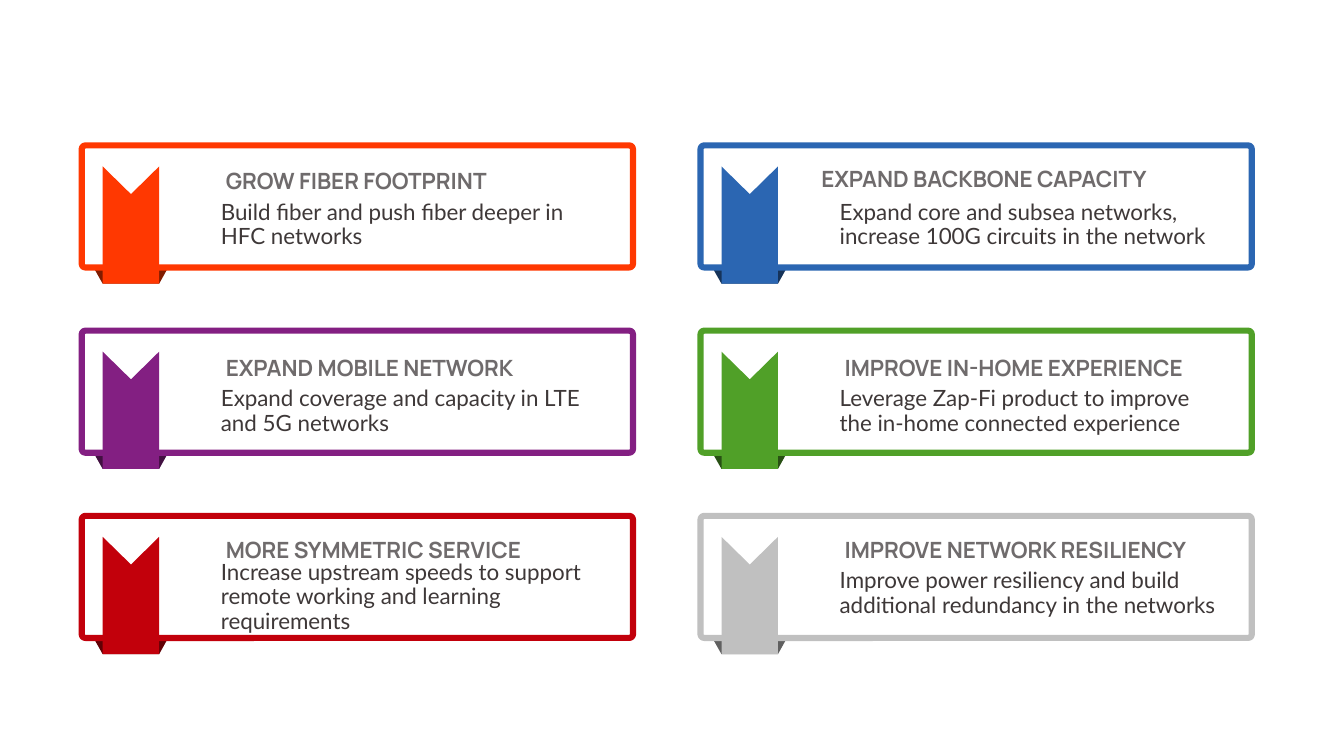
"""Build a slide of six ribbon cards describing network priorities."""
from dataclasses import dataclass

from pptx import Presentation
from pptx.dml.color import RGBColor
from pptx.enum.shapes import MSO_SHAPE
from pptx.enum.text import MSO_ANCHOR, MSO_AUTO_SIZE
from pptx.util import Pt


@dataclass(frozen=True)
class Theme:
    """Colours, fonts and type size of the slide."""
    white: str = "FFFFFF"
    heading_color: str = "6F6B6C"
    body_color: str = "3E3838"
    heading_font: str = "Manrope"
    body_font: str = "Lato"
    text_size: int = 16
    orange: tuple = ("FF3801", "801C00")
    blue: tuple = ("2B66B2", "163359")
    purple: tuple = ("831F82", "421041")
    green: tuple = ("50A028", "285014")
    red: tuple = ("C2000B", "610005")
    gray: tuple = ("C0C0C0", "606060")


def add_polygon(shapes, left, top, points, color):
    """Add a filled outline whose points are relative to left and top."""
    corners = [(Pt(left + x), Pt(top + y)) for x, y in points]
    builder = shapes.build_freeform(*corners[0])
    builder.add_line_segments(corners[1:], close=True)
    shape = builder.convert_to_shape()
    shape.shadow.inherit = False
    shape.fill.solid()
    shape.fill.fore_color.rgb = RGBColor.from_string(color)
    shape.line.fill.background()


def add_text(slide, box, text, font_name, color, margins, bold=False):
    """Add a one-paragraph text box and return it with its paragraph."""
    shape = slide.shapes.add_textbox(*map(Pt, box))
    frame = shape.text_frame
    frame.auto_size = MSO_AUTO_SIZE.SHAPE_TO_FIT_TEXT
    frame.margin_left = frame.margin_right = Pt(margins[0])
    frame.margin_top = frame.margin_bottom = Pt(margins[1])
    paragraph = frame.paragraphs[0]
    paragraph.text = text
    paragraph.font.name = font_name
    paragraph.font.size = Pt(theme.text_size)
    paragraph.font.bold = bold
    paragraph.font.color.rgb = RGBColor.from_string(color)
    return frame, paragraph


theme = Theme()
presentation = Presentation()
presentation.slide_width, presentation.slide_height = Pt(960), Pt(540)
slide = presentation.slides.add_slide(presentation.slide_layouts[6])

GRID_LEFT, GRID_TOP = 56.2, 101.7
COLUMN_STEP, ROW_STEP = 442, 132.3
CARD_WIDTH, CARD_HEIGHT, BORDER = 398.2, 91.6, 4.4
TEXT_INDENT, BODY_WIDTH = 98, 283
FOLD = [(17.2, 101), (5.9, 81), (68.6, 81), (57.5, 101)]
RIBBON = [(57.5, 17.2), (37.4, 37), (17.2, 17.2), (17.2, 101), (57.5, 101)]

cards = [
    (theme.orange, "GROW FIBER FOOTPRINT", 0, 115.9, 208.1,
     "Build fiber and push fiber deeper in HFC networks", 141.1, 40.3),
    (theme.blue, "EXPAND BACKBONE CAPACITY", -16.6, 114.5, 261.4,
     "Expand core and subsea networks, increase 100G circuits in the network", 141.1, 40.3),
    (theme.purple, "EXPAND MOBILE NETWORK", 0, 249.1, 229,
     "Expand coverage and capacity in LTE and 5G networks", 274.3, 40.3),
    (theme.green, "IMPROVE IN-HOME EXPERIENCE", 0, 249.1, 265.7,
     "Leverage Zap-Fi product to improve the in-home connected experience", 274.3, 40.3),
    (theme.red, "MORE SYMMETRIC SERVICE", 0, 379.4, 231.8,
     "Increase upstream speeds to support remote working and learning requirements", 398.2, 58.3),
    (theme.gray, "IMPROVE NETWORK RESILIENCY", 0, 379.4, 267.1,
     "Improve power resiliency and build additional redundancy in the networks", 404.6, 40.3),
]

for index, card in enumerate(cards):
    (color, fold_color), heading, shift, heading_top, heading_width, body, body_top, body_height = card
    row, column = divmod(index, 2)
    left = GRID_LEFT + column * COLUMN_STEP
    top = GRID_TOP + row * ROW_STEP
    shapes = slide.shapes.add_group_shape().shapes

    add_polygon(shapes, left, top, FOLD, fold_color)
    border = shapes.add_shape(
        MSO_SHAPE.ROUNDED_RECTANGLE, Pt(left + BORDER / 2), Pt(top + BORDER / 2),
        Pt(CARD_WIDTH - BORDER), Pt(CARD_HEIGHT - BORDER))
    border.adjustments[0] = 0.03
    border.shadow.inherit = False
    border.fill.solid()
    border.fill.fore_color.rgb = RGBColor.from_string(theme.white)
    border.line.color.rgb = RGBColor.from_string(color)
    border.line.width = Pt(BORDER)
    add_polygon(shapes, left, top, RIBBON, color)

    text_left = left + TEXT_INDENT
    frame, paragraph = add_text(
        slide, (text_left, body_top, BODY_WIDTH, body_height), body,
        theme.body_font, theme.body_color, (3.6, 1.8))
    frame.word_wrap = True
    paragraph.line_spacing = Pt(17.5)

    frame, paragraph = add_text(
        slide, (text_left + shift, heading_top, heading_width, 26.6), heading,
        theme.heading_font, theme.heading_color, (7.2, 3.6), bold=True)
    frame.word_wrap = False
    frame.vertical_anchor = MSO_ANCHOR.MIDDLE

presentation.save("out.pptx")
